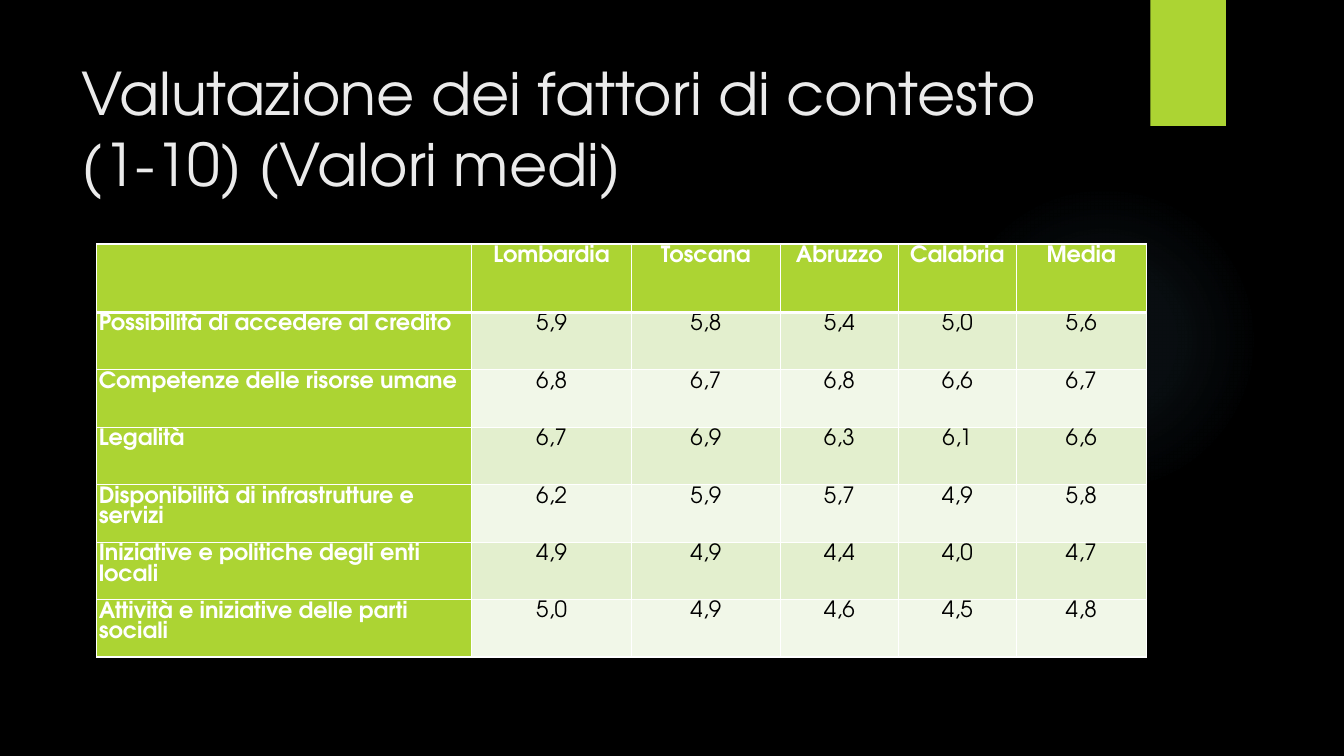
from lxml import etree
from pptx import Presentation
from pptx.dml.color import RGBColor
from pptx.enum.shapes import MSO_SHAPE
from pptx.enum.text import MSO_ANCHOR, PP_ALIGN
from pptx.oxml import parse_xml
from pptx.util import Inches, Pt

CENTER, LEFT, MIDDLE = PP_ALIGN.CENTER, PP_ALIGN.LEFT, MSO_ANCHOR.MIDDLE
RECT, OVAL = MSO_SHAPE.RECTANGLE, MSO_SHAPE.OVAL
NS = "http://schemas.openxmlformats.org/drawingml/2006/main"
FONT = "TeX Gyre Adventor"
BLACK, WHITE, GREEN, GLOW = "000000", "FFFFFF", "ACD433", "7AC4F0"
BANDS = ("E3EFCE", "F1F7E8")

TITLE = "Valutazione dei fattori di contesto (1-10) (Valori medi)"
ROWS = [
    ("", "Lombardia", "Toscana", "Abruzzo", "Calabria", "Media"),
    ("Possibilità di accedere al credito", "5,9", "5,8", "5,4", "5,0", "5,6"),
    ("Competenze delle risorse umane", "6,8", "6,7", "6,8", "6,6", "6,7"),
    ("Legalità", "6,7", "6,9", "6,3", "6,1", "6,6"),
    ("Disponibilità di infrastrutture e servizi", "6,2", "5,9", "5,7", "4,9", "5,8"),
    ("Iniziative e politiche degli enti locali", "4,9", "4,9", "4,4", "4,0", "4,7"),
    ("Attività e iniziative delle parti sociali", "5,0", "4,9", "4,6", "4,5", "4,8"),
]
COL_WIDTHS = (3.72, 1.58, 1.48, 1.17, 1.17, 1.29)
HEADER_HEIGHT, ROW_HEIGHT = 0.68, 0.57
GLOW_STOPS = ((0, 7), (36, 6), (69, 0))  # position %, opacity %


def rgb(color):
    return RGBColor.from_string(color)


def add_plain_shape(kind, left, top, width, height, color):
    sp = slide.shapes.add_shape(kind, Inches(left), Inches(top), Inches(width), Inches(height))
    sp.shadow.inherit = False
    sp.fill.solid()
    sp.fill.fore_color.rgb = rgb(color)
    sp.line.fill.background()
    return sp


def set_glow(sp):
    """Replace the solid fill with a radial gradient that fades out."""
    stops = "".join(
        f'<a:gs pos="{pos * 1000}"><a:srgbClr val="{GLOW}"><a:alpha val="{alpha * 1000}"/></a:srgbClr></a:gs>'
        for pos, alpha in GLOW_STOPS)
    grad = parse_xml(
        f'<a:gradFill xmlns:a="{NS}" rotWithShape="1"><a:gsLst>{stops}</a:gsLst><a:path path="circle">'
        '<a:fillToRect l="50000" t="50000" r="50000" b="50000"/></a:path></a:gradFill>')
    sp_pr = sp._element.spPr
    sp_pr.replace(sp_pr.find(f"{{{NS}}}solidFill"), grad)


def add_text(p, text, size, color, bold=False):
    r = p.add_run()
    r.text = text
    r.font.name = FONT
    r.font.size = Pt(size)
    r.font.bold = bold
    r.font.color.rgb = rgb(color)


def set_borders(cell, top, bottom):
    tc_pr = cell._tc.get_or_add_tcPr()
    for i, (side, width) in enumerate((("L", 1), ("R", 1), ("T", top), ("B", bottom))):
        ln = etree.Element(f"{{{NS}}}ln{side}", w=str(Pt(width)))
        fill = etree.SubElement(ln, f"{{{NS}}}solidFill")
        etree.SubElement(fill, f"{{{NS}}}srgbClr", val=WHITE)
        tc_pr.insert(i, ln)


def fill_cell(cell, row, col, text):
    is_head = row == 0 or col == 0
    cell.margin_left = cell.margin_right = Inches(0.02)
    cell.margin_top = cell.margin_bottom = Inches(0.02)
    cell.fill.solid()
    cell.fill.fore_color.rgb = rgb(GREEN if is_head else BANDS[(row - 1) % 2])
    set_borders(cell, 3 if row == 1 else 1, 3 if row == 0 else 1)
    if text:
        p = cell.text_frame.paragraphs[0]
        p.alignment = CENTER if col else LEFT
        p.line_spacing = Pt(14.8)
        add_text(p, text, 16, WHITE if is_head else BLACK, is_head)


prs = Presentation()
prs.slide_width, prs.slide_height = Inches(13.33), Inches(7.5)
slide = prs.slides.add_slide(prs.slide_layouts[6])
slide.background.fill.solid()
slide.background.fill.fore_color.rgb = rgb(BLACK)

set_glow(add_plain_shape(OVAL, 9.41, 1.83, 3.08, 3.08, GLOW))
add_plain_shape(RECT, 11.41, 0, 0.75, 1.25, GREEN)

title = slide.shapes.add_textbox(Inches(0.71), Inches(0.5), Inches(10.29), Inches(1.53))
tf = title.text_frame
tf.word_wrap = True
tf.vertical_anchor = MIDDLE
add_text(tf.paragraphs[0], TITLE, 42, "EBEBEB")

table_height = HEADER_HEIGHT + ROW_HEIGHT * (len(ROWS) - 1)
table = slide.shapes.add_table(len(ROWS), len(COL_WIDTHS), Inches(0.96), Inches(2.42),
                               Inches(sum(COL_WIDTHS)), Inches(table_height)).table
for column, width in zip(table.columns, COL_WIDTHS):
    column.width = Inches(width)
for row, texts in enumerate(ROWS):
    table.rows[row].height = Inches(ROW_HEIGHT if row else HEADER_HEIGHT)
    for col, text in enumerate(texts):
        fill_cell(table.cell(row, col), row, col, text)

prs.save("out.pptx")
